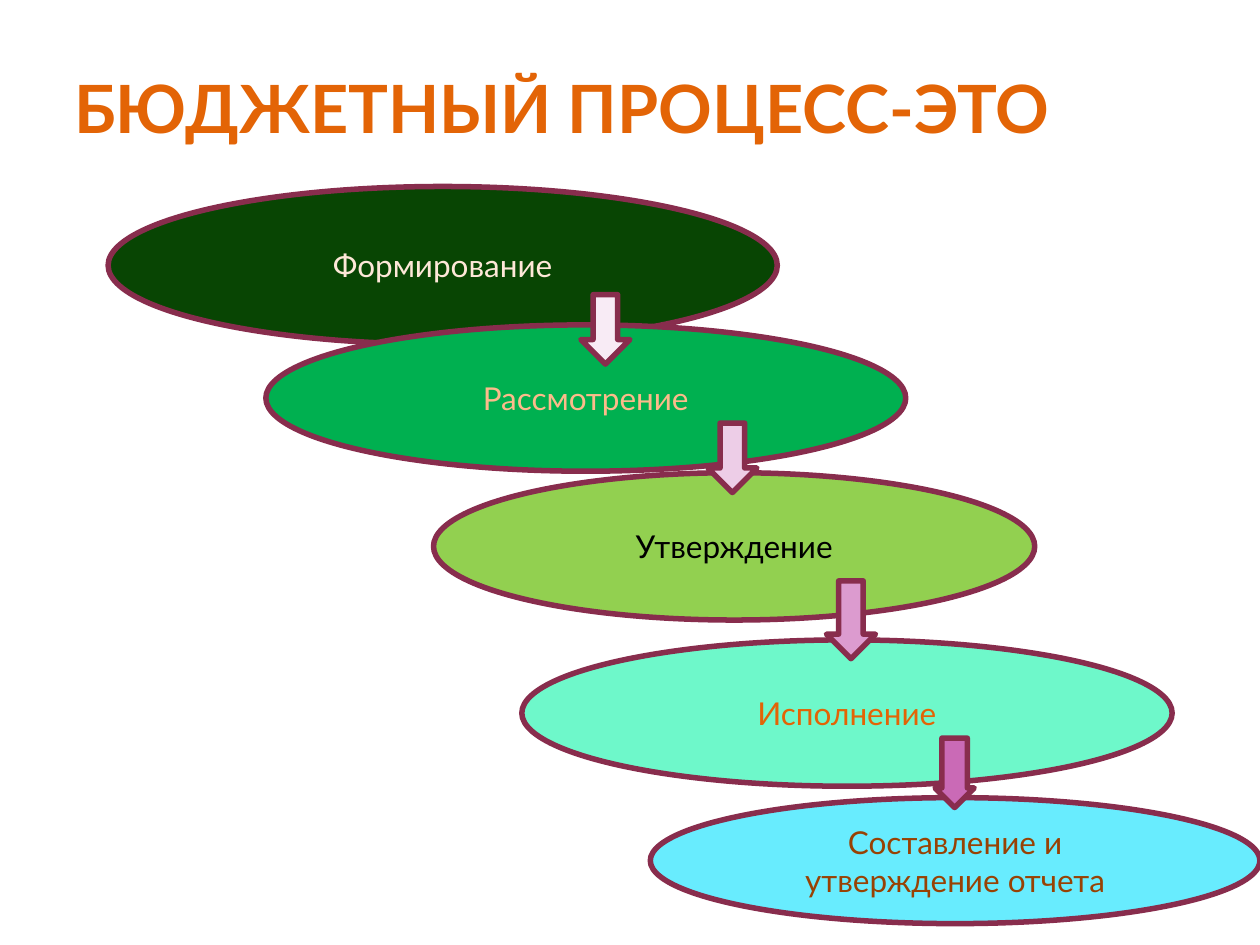
from dataclasses import dataclass

from pptx import Presentation
from pptx.dml.color import RGBColor
from pptx.enum.shapes import MSO_SHAPE as Shape
from pptx.enum.text import MSO_ANCHOR as Anchor, PP_ALIGN as Align
from pptx.util import Cm, Pt


@dataclass(frozen=True)
class Theme:
    font: str = "Lato"
    title_size: int = 38
    stage_size: int = 18
    title: str = "E36406"
    outline: str = "882D4D"
    outline_width: float = 3.15


THEME = Theme()

# Stage: text, text colour, fill, (left, top, width, height) in cm
STAGES = [
    ("Формирование", "FEE8D8", "084503", (2.18, 3.76, 13.49, 3.18)),
    ("Рассмотрение", "FCBB8B", "00B050", (5.36, 6.55, 12.9, 2.95)),
    ("Утверждение", "000000", "92D050", (8.74, 9.53, 12.12, 2.97)),
    ("Исполнение", "E36406", "6EF8CA", (10.52, 12.9, 13.11, 2.95)),
    ("Составление и утверждение отчета", "984204", "68ECFE",
     (13.11, 16.08, 12.29, 2.54)),
]

# Arrow to the next stage: fill, shaft share of the width, box in cm
ARROWS = [
    ("F8EBF5", 0.5, (11.71, 5.94, 0.99, 1.4)),
    ("EDCDE7", 0.5, (14.27, 8.53, 0.99, 1.4)),
    ("DC9BCF", 0.5, (16.66, 11.71, 0.99, 1.57)),
    ("CA6AB6", 0.65, (18.85, 14.88, 0.79, 1.4)),
]


def write_centred(frame, text, size, color, bold=False):
    paragraph = frame.paragraphs[0]
    paragraph.alignment = Align.CENTER
    run = paragraph.add_run()
    run.text = text
    run.font.name = THEME.font
    run.font.size = Pt(size)
    run.font.bold = bold
    run.font.color.rgb = RGBColor.from_string(color)


def add_title(slide, text):
    title = slide.shapes.title
    title.left, title.top = Cm(1.27), Cm(0.89)
    title.width, title.height = Cm(20.12), Cm(2.08)
    frame = title.text_frame
    frame.word_wrap = False
    frame.vertical_anchor = Anchor.BOTTOM
    frame.margin_left = frame.margin_right = Cm(0.13)
    frame.margin_top = frame.margin_bottom = 0
    write_centred(frame, text, THEME.title_size, THEME.title, bold=True)


def add_outlined(slide, kind, fill, box):
    outlined = slide.shapes.add_shape(kind, *map(Cm, box))
    outlined.shadow.inherit = False
    outlined.fill.solid()
    outlined.fill.fore_color.rgb = RGBColor.from_string(fill)
    outlined.line.color.rgb = RGBColor.from_string(THEME.outline)
    outlined.line.width = Pt(THEME.outline_width)
    return outlined


def add_stage(slide, text, color, fill, box):
    frame = add_outlined(slide, Shape.OVAL, fill, box).text_frame
    frame.word_wrap = True
    frame.vertical_anchor = Anchor.MIDDLE
    write_centred(frame, text, THEME.stage_size, color)


def add_arrow(slide, fill, shaft, box):
    arrow = add_outlined(slide, Shape.DOWN_ARROW, fill, box)
    arrow.adjustments[0] = shaft


def main():
    deck = Presentation()
    deck.slide_width, deck.slide_height = Cm(25.4), Cm(19.05)
    slide = deck.slides.add_slide(deck.slide_layouts[5])

    add_title(slide, "БЮДЖЕТНЫЙ ПРОЦЕСС-ЭТО")

    # Cascade of stages, with the arrows on top
    for stage in STAGES:
        add_stage(slide, *stage)
    for arrow in ARROWS:
        add_arrow(slide, *arrow)

    deck.save("out.pptx")


if __name__ == "__main__":
    main()
